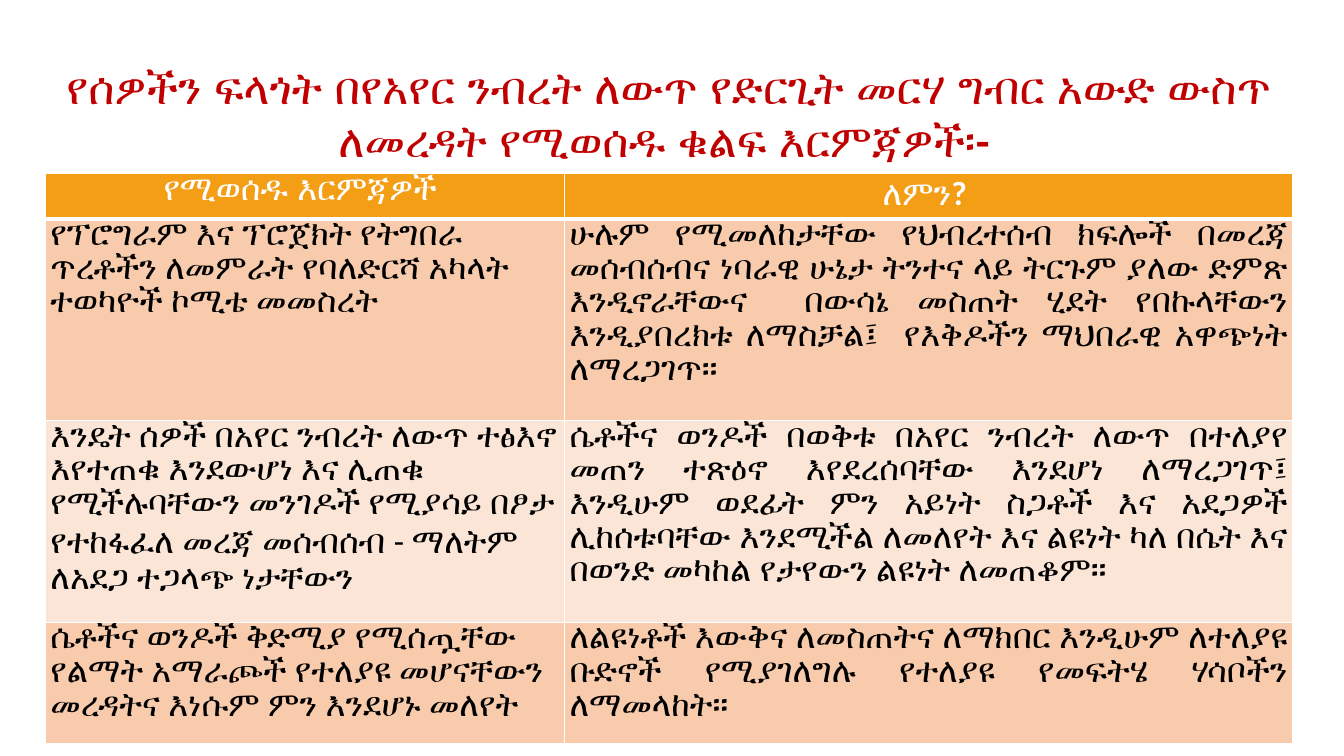
from lxml import etree
from pptx import Presentation
from pptx.dml.color import RGBColor
from pptx.enum.text import MSO_AUTO_SIZE, PP_ALIGN as Align
from pptx.oxml.ns import qn
from pptx.util import Pt

RED = RGBColor(0xC0, 0x00, 0x00)
WHITE = RGBColor(0xFF, 0xFF, 0xFF)
BLACK = RGBColor(0x00, 0x00, 0x00)
ORANGE = RGBColor(0xF3, 0x9E, 0x15)
PEACH = RGBColor(0xF8, 0xCB, 0xAD)
CREAM = RGBColor(0xFB, 0xE5, 0xD6)

TITLE = "የሰዎችን ፍላጎት በየአየር ንብረት ለውጥ የድርጊት መርሃ ግብር አውድ ውስጥ ለመረዳት የሚወሰዱ ቁልፍ እርምጃዎች፡- "
STEPS = [
    ("የሚወሰዱ እርምጃዎች ", "ለምን? "),
    ("የፕሮግራም እና ፕሮጀክት የትግበራ ጥረቶችን ለመምራት የባለድርሻ አካላት ተወካዮች ኮሚቴ መመስረት",
     "ሁሉም የሚመለከታቸው የህብረተሰብ ክፍሎች በመረጃ መሰብሰብና ነባራዊ ሁኔታ ትንተና ላይ ትርጉም ያለው ድምጽ "
     "እንዲኖራቸውና  በውሳኔ መስጠት ሂደት የበኩላቸውን እንዲያበረክቱ ለማስቻል፤  የእቅዶችን ማህበራዊ አዋጭነት ለማረጋገጥ።"),
    ("እንዴት ሰዎች በአየር ንብረት ለውጥ ተፅእኖ እየተጠቁ እንደውሆነ እና ሊጠቁ የሚችሉባቸውን መንገዶች የሚያሳይ "
     "በፆታ የተከፋፈለ መረጃ መሰብሰብ - ማለትም ለአደጋ ተጋላጭ ነታቸውን",
     "ሴቶችና ወንዶች በወቅቱ በአየር ንብረት ለውጥ በተለያየ መጠን ተጽዕኖ እየደረሰባቸው እንደሆነ ለማረጋገጥ፤ "
     "እንዲሁም ወደፊት ምን አይነት ስጋቶች እና አደጋዎች ሊከሰቱባቸው እንደሚችል ለመለየት እና ልዩነት ካለ በሴት እና "
     "በወንድ መካከል የታየውን ልዩነት ለመጠቆም።"),
    ("ሴቶችና ወንዶች ቅድሚያ የሚሰጧቸው የልማት አማራጮች የተለያዩ መሆናቸውን መረዳትና እነሱም ምን እንደሆኑ መለየት",
     "ለልዩነቶች እውቅና ለመስጠትና ለማክበር እንዲሁም ለተለያዩ ቡድኖች የሚያገለግሉ የተለያዩ የመፍትሄ ሃሳቦችን ለማመላከት።"),
]
COLUMN_WIDTHS = [370.8, 520.2]
ROW_HEIGHTS = [32.4, 129.6, 140.4, 85.6]
ROW_FILLS = [ORANGE, PEACH, CREAM, PEACH]


def write(frame, text, size, color, bold, alignment):
    """Put one formatted run in the first paragraph of a text frame."""
    paragraph = frame.paragraphs[0]
    paragraph.alignment = alignment
    run = paragraph.add_run()
    run.text = text
    run.font.name = "Calibri"
    run.font.size = Pt(size)
    run.font.bold = bold
    run.font.color.rgb = color


def add_title(slide):
    """Add the centred red heading."""
    shape = slide.shapes.add_textbox(Pt(32.4), Pt(38.9), Pt(891), Pt(85))
    shape.text_frame.word_wrap = True
    shape.text_frame.auto_size = MSO_AUTO_SIZE.SHAPE_TO_FIT_TEXT
    write(shape.text_frame, TITLE, 32, RED, True, Align.CENTER)


def set_borders(cell, bottom_width):
    """Draw white borders round a cell."""
    properties = cell._tc.get_or_add_tcPr()
    widths = {"a:lnL": 1, "a:lnR": 1, "a:lnT": 1, "a:lnB": bottom_width}
    for position, (tag, width) in enumerate(widths.items()):
        line = etree.Element(qn(tag), w=str(Pt(width)))
        fill = etree.SubElement(line, qn("a:solidFill"))
        etree.SubElement(fill, qn("a:srgbClr"), val=str(WHITE))
        properties.insert(position, line)


def fill_cell(cell, text, row, column):
    """Write and colour one table cell."""
    header = row == 0
    cell.margin_left = cell.margin_right = Pt(3.6)
    cell.margin_top = cell.margin_bottom = Pt(0)
    cell.fill.solid()
    cell.fill.fore_color.rgb = ROW_FILLS[row]
    set_borders(cell, 3 if header else 1)
    body_alignment = Align.JUSTIFY if column else None
    write(cell.text_frame, text, 24, WHITE if header else BLACK, header,
          Align.CENTER if header else body_alignment)


def add_steps_table(slide):
    """Add the table of steps and their reasons."""
    frame = slide.shapes.add_table(len(STEPS), len(COLUMN_WIDTHS), Pt(32.4), Pt(123.9),
                                   Pt(sum(COLUMN_WIDTHS)), Pt(sum(ROW_HEIGHTS)))
    table = frame.table
    for column, width in zip(table.columns, COLUMN_WIDTHS):
        column.width = Pt(width)
    for row, texts in enumerate(STEPS):
        table.rows[row].height = Pt(ROW_HEIGHTS[row])
        for column, text in enumerate(texts):
            fill_cell(table.cell(row, column), text, row, column)


def main():
    """Build and save the slide."""
    presentation = Presentation()
    presentation.slide_width, presentation.slide_height = Pt(960), Pt(540)
    slide = presentation.slides.add_slide(presentation.slide_layouts[6])
    add_title(slide)
    add_steps_table(slide)
    presentation.save("out.pptx")


if __name__ == "__main__":
    main()
